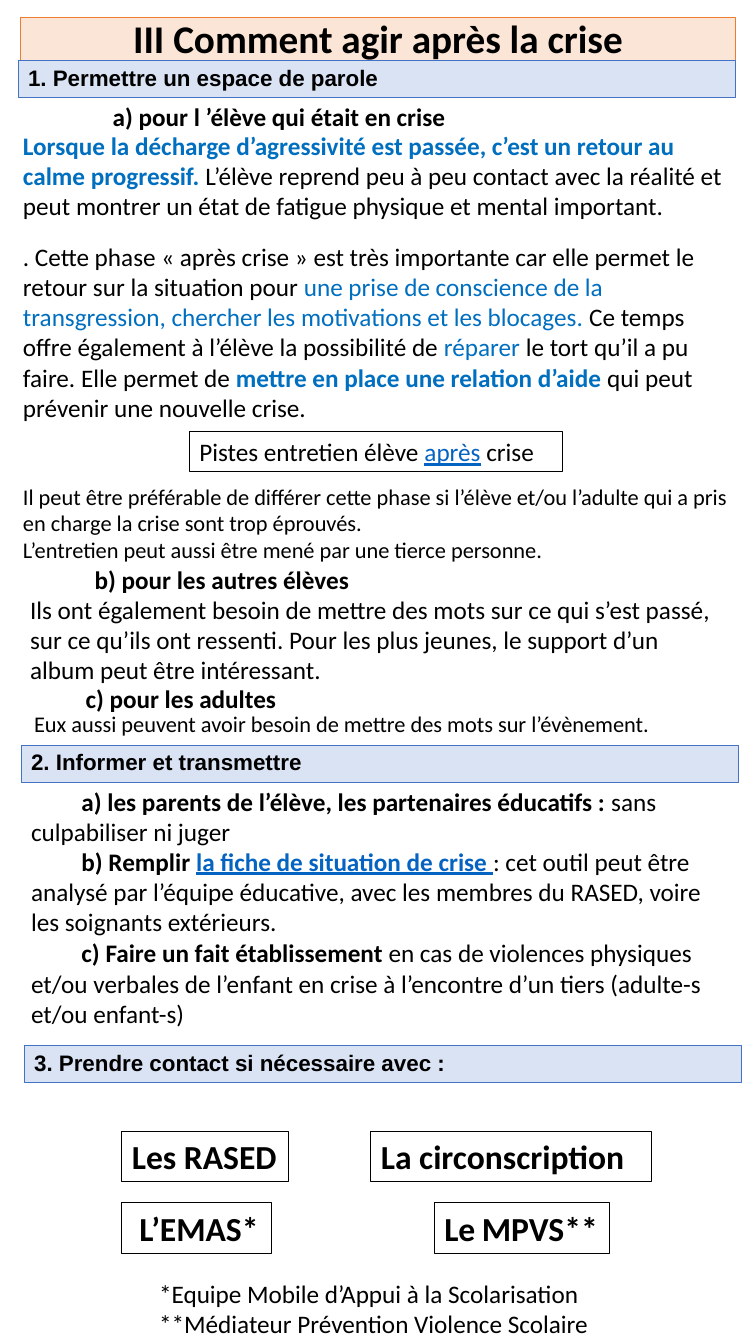
from pptx import Presentation
from pptx.dml.color import RGBColor
from pptx.enum.shapes import MSO_SHAPE
from pptx.enum.text import MSO_ANCHOR, MSO_AUTO_SIZE, PP_ALIGN
from pptx.util import Inches, Pt

RECT = MSO_SHAPE.RECTANGLE
MID, TOP = MSO_ANCHOR.MIDDLE, MSO_ANCHOR.TOP
GROW, FIXED = MSO_AUTO_SIZE.SHAPE_TO_FIT_TEXT, MSO_AUTO_SIZE.NONE
CENTER, LEFT = PP_ALIGN.CENTER, PP_ALIGN.LEFT

deck = Presentation()
deck.slide_width, deck.slide_height = Inches(7.5), Inches(13.33)
slide = deck.slides.add_slide(deck.slide_layouts[6])
CELL = deck.slide_width / 75  # square grid, 75 columns wide

BLACK, BLUE, LINK = "000000", "006FC0", "0563C1"
STYLES = {
    "plain": {"bold": False, "underline": False, "ink": BLACK},
    "bold": {"bold": True, "underline": False, "ink": BLACK},
    "blue": {"bold": False, "underline": False, "ink": BLUE},
    "strong": {"bold": True, "underline": False, "ink": BLUE},
    "link": {"bold": False, "underline": True, "ink": LINK},
    "key": {"bold": True, "underline": True, "ink": LINK},
}


def tint(part, code):
    part.rgb = RGBColor.from_string(code)


def add(spot, paras, size=18, face="Calibri", fill=None, line=None,
        wrap=True, fit=GROW, anchor=TOP, indent=0, **looks):
    """Add a text block; each paragraph is a list of (style, text[, size])."""
    place = [round(n * CELL) for n in spot]
    if line:
        shape = slide.shapes.add_shape(RECT, *place)
        shape.shadow.inherit = False
        shape.line.width = Pt(0.75)
        tint(shape.line.color, line)
        if fill:
            shape.fill.solid()
            tint(shape.fill.fore_color, fill)
        else:
            shape.fill.background()
    else:
        shape = slide.shapes.add_textbox(*place)
    frame = shape.text_frame
    frame.word_wrap, frame.auto_size, frame.vertical_anchor = wrap, fit, anchor
    for i, runs in enumerate(paras):
        para = frame.add_paragraph() if i else frame.paragraphs[0]
        for name, value in {"alignment": LEFT, **looks}.items():
            setattr(para, name, value)
        if indent:
            para._p.get_or_add_pPr().set("indent", str(round(indent * CELL)))
        for style, text, *own in runs:
            run = para.add_run()
            run.text = text
            font = run.font
            font.name, font.size = face, Pt(own[0] if own else size)
            for name, value in STYLES[style].items():
                if name == "ink":
                    tint(font.color, value)
                else:
                    setattr(font, name, value)
    return frame


# Title and section bars
add((2, 1.7, 71, 4.9), [[("bold", "III Comment agir après la crise")]], 28,
    fill="FBE5D6", line="ED7D31", fit=FIXED, anchor=MID,
    alignment=CENTER, line_spacing=0.8)
bars = [
    (6, "1. Permettre un espace de parole"),
    (73.9, "2. Informer et transmettre"),
    (103.7, "3. Prendre contact si nécessaire avec :"),
]
for i, (y, text) in enumerate(bars):
    add((1.8 + 0.3 * i, y, 71.2, 3.7), [[("bold", text)]], 16, "Arial",
        fill="DAE3F3", line="4472C4", fit=FIXED, anchor=MID, line_spacing=0.9)

# Section 1: headings
heads = [
    (10.2, 9.6, "a) pour l ’élève qui était en crise"),
    (8.4, 55.5, "b) pour les autres élèves"),
    (7.5, 67.3, "c) pour les adultes"),
]
for x, y, text in heads:
    add((x, y, 57.8, 4), [[("bold", text)]])

# Section 1: body
pupil = add((1.3, 12.4, 73, 45.4), [
    [("strong", "Lorsque la décharge d’agressivité est passée, c’est un retour "
                "au calme progressif. "),
     ("plain", "L’élève reprend peu à peu contact avec la réalité et peut "
               "montrer un état de fatigue physique et mental important.")],
    [("plain", ". Cette phase « après crise » est très importante car elle "
               "permet le retour sur la situation pour "),
     ("blue", "une prise de conscience de la transgression, chercher les "
              "motivations et les blocages. "),
     ("plain", "Ce temps offre également à l’élève la possibilité de "),
     ("blue", "réparer "),
     ("plain", "le tort qu’il a pu faire. Elle permet de "),
     ("strong", "mettre en place une relation d’aide "),
     ("plain", "qui peut prévenir une nouvelle crise.")],
    [("plain", "Il peut être préférable de différer cette phase si l’élève "
               "et/ou l’adulte qui a pris en charge la crise sont trop "
               "éprouvés.", 16)],
    [("plain", "L’entretien peut aussi être mené par une tierce personne.",
      16)],
])
for para, gap in zip(pupil.paragraphs, (0, 14.5, 43, 0)):
    para.space_before = Pt(gap)
add((2, 58.4, 70, 10.1), [[
    ("plain", "Ils ont également besoin de mettre des mots sur ce qui s’est "
              "passé, sur ce qu’ils ont ressenti. Pour les plus jeunes, le "
              "support d’un album peut être intéressant.")]])
add((2.4, 69.9, 69.2, 3.7), [[
    ("plain", "Eux aussi peuvent avoir besoin de mettre des mots sur "
              "l’évènement.")]], 16)

# Section 2: steps with an indented first line
steps = [
    (77.5, 67.3, 7.1, [
        ("bold", "a) les parents de l’élève, les partenaires éducatifs : "),
        ("plain", "sans culpabiliser ni juger")]),
    (83.4, 71.2, 10.1, [
        ("bold", "b) Remplir "),
        ("key", "la fiche de situation de crise "),
        ("plain", ": cet outil peut être analysé par l’équipe éducative, avec "
                  "les membres du RASED, voire les soignants extérieurs.")]),
    (92.5, 70.2, 10.1, [
        ("bold", "c) Faire un fait établissement "),
        ("plain", "en cas de violences physiques et/ou verbales de l’enfant "
                  "en crise à l’encontre d’un tiers (adulte-s et/ou "
                  "enfant-s)")]),
]
for y, wide, high, runs in steps:
    add((2.1, y, wide, high), [runs], indent=5)

# Framed boxes: interview leads and contacts
add((18.8, 42.8, 37, 4), [[
    ("plain", "Pistes entretien élève "), ("link", "après"),
    ("plain", " crise")]], line=BLACK)
boxes = [
    (12.1, 112.2, 16.5, False, [("bold", "Les RASED")]),
    (36.8, 112.2, 27.8, True, [("bold", "La circonscription")]),
    (12.1, 119.3, 14.8, True, [("bold", " L’EMAS*")]),
    (43.1, 119.3, 17.4, False,
     [("bold", "Le"), ("bold", " ", 20), ("bold", "MPVS**")]),
]
for x, y, wide, wrap, runs in boxes:
    add((x, y, wide, 5), [runs], 24, line=BLACK, wrap=wrap)

# Footnotes
add((14.8, 126.3, 46.3, 7.1), [
    [("plain", "*Equipe Mobile d’Appui à la Scolarisation")],
    [("plain", "**Médiateur Prévention Violence Scolaire")]])

deck.save("out.pptx")
